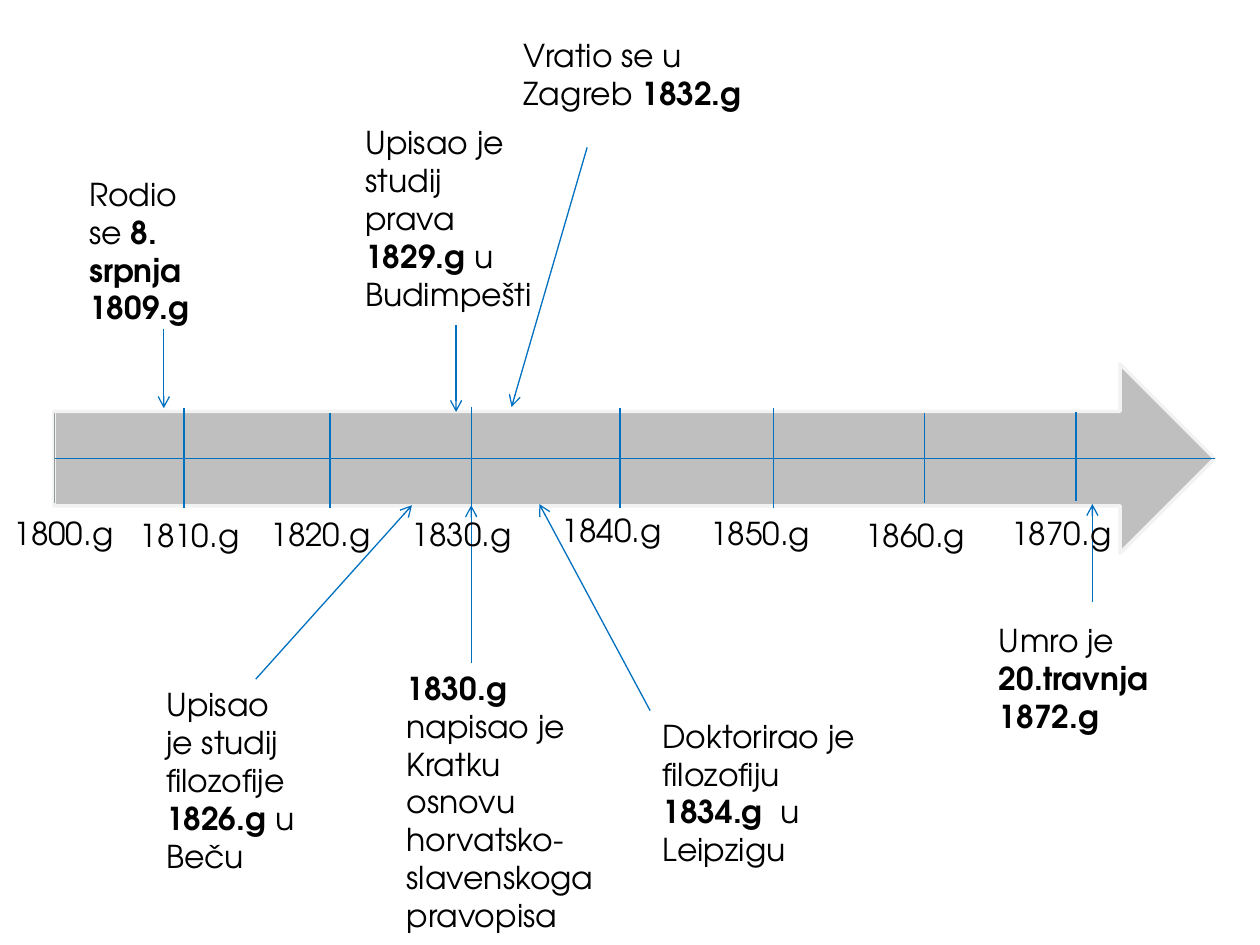
"""Build a timeline slide of a life from 1800 to 1870, laid out on a grid of 100 columns by 75 rows."""
from typing import NamedTuple, Optional

import pptx
import pptx.dml.color
import pptx.enum.shapes
import pptx.enum.text
import pptx.oxml
import pptx.oxml.ns
import pptx.util

COLORS = {"band": "BFBFBF", "edge": "F2F2F2", "line": "0070C0", "start": "8F9F96", "text": "000000"}
FONT = "TeX Gyre Adventor"
COLUMNS, ROWS = 100, 75
LABEL_HEIGHT = 4


class Box(NamedTuple):
    left: float
    top: float
    width: float
    height: float


class Line(NamedTuple):
    x1: float
    y1: float
    x2: float
    y2: float


class Decade(NamedTuple):
    year: int
    x: float
    top: float
    bottom: float
    label_left: float
    label_top: float
    label_width: float
    color: str = "line"


class Event(NamedTuple):
    box: Box
    pointer: Line
    paragraphs: list[list[tuple[str, bool]]]


DECADES = [
    Decade(1800, 4.3, 32.8, 39.9, 0.1, 40.3, 10.2, "start"),
    Decade(1810, 14.6, 32.4, 40.3, 10.1, 40.5, 10.2),
    Decade(1820, 26.2, 32.8, 40.3, 20.5, 40.4, 11.3),
    Decade(1830, 37.4, 32.3, 40.2, 31.7, 40.4, 11.4),
    Decade(1840, 49.2, 32.4, 40.3, 43.6, 40.1, 11.2),
    Decade(1850, 61.4, 32.4, 40.3, 55.4, 40.3, 11.8),
    Decade(1860, 73.4, 32.8, 39.9, 67.7, 40.5, 11.5),
    Decade(1870, 85.4, 32.7, 39.8, 79.3, 40.3, 10.2),
]

EVENTS = [
    Event(Box(6.1, 13.4, 10.6, 13.1), Line(13, 26.1, 13, 32.4),
          [[("Rodio se ", False), ("8. srpnja 1809.g", True)]]),
    Event(Box(12.2, 53.9, 12.3, 16.2), Line(20.3, 53.9, 32.7, 40.1),
          [[("Upisao je studij filozofije ", False), ("1826.g ", True), ("u Beču", False)]]),
    Event(Box(28, 9.3, 15.7, 16.2), Line(36.2, 25.8, 36.2, 32.7),
          [[("Upisao je studij prava ", False), ("1829.g", True), (" u Budimpešti", False)]]),
    Event(Box(31.3, 52.6, 17.7, 22.2), Line(37.4, 52.6, 37.4, 40.1),
          [[("1830.g ", True), ("napisao je Kratku osnovu horvatsko-slavenskoga", False)],
           [("pravopisa", False)]]),
    Event(Box(40.6, 2.4, 22, 7.1), Line(46.6, 11.7, 40.6, 32.3),
          [[("Vratio se u Zagreb ", False), ("1832.g", True)]]),
    Event(Box(51.6, 56.4, 18.1, 13.1), Line(51.6, 56.4, 42.8, 40),
          [[("Doktorirao je filozofiju ", False), ("1834.g", True), ("  u Leipzigu", False)]]),
    Event(Box(78.3, 48.8, 16.9, 10.1), Line(86.7, 47.8, 86.7, 40),
          [[("Umro je ", False), ("20.travnja 1872.g", True)]]),
]

deck = pptx.Presentation()
deck.slide_width, deck.slide_height = pptx.util.Inches(10), pptx.util.Inches(7.5)
slide = deck.slides.add_slide(deck.slide_layouts[6])


def across(columns: float) -> int:
    return round(deck.slide_width * columns / COLUMNS)


def down(rows: float) -> int:
    return round(deck.slide_height * rows / ROWS)


def place(box: Box) -> tuple[int, int, int, int]:
    return across(box.left), down(box.top), across(box.width), down(box.height)


def rgb(name: str) -> pptx.dml.color.RGBColor:
    return pptx.dml.color.RGBColor.from_string(COLORS[name])


def draw_band(box: Box) -> pptx.shapes.autoshape.Shape:
    band = slide.shapes.add_shape(pptx.enum.shapes.MSO_SHAPE.RIGHT_ARROW, *place(box))
    band.shadow.inherit = False
    band.fill.solid()
    band.fill.fore_color.rgb = rgb("band")
    band.line.color.rgb = rgb("edge")
    band.line.width = pptx.util.Pt(2)
    return band


def draw_line(line: Line, color: str = "line", head: Optional[str] = None) -> pptx.shapes.connector.Connector:
    connector = slide.shapes.add_connector(
        pptx.enum.shapes.MSO_CONNECTOR.STRAIGHT,
        across(line.x1), down(line.y1), across(line.x2), down(line.y2))
    connector.line.color.rgb = rgb(color)
    connector.line.width = pptx.util.Pt(0.75)
    namespace = pptx.oxml.ns.nsdecls("a")
    if head:
        connector.line._get_or_add_ln().append(
            pptx.oxml.parse_xml(f'<a:tailEnd {namespace} type="{head}"/>'))
    connector._element.spPr.append(pptx.oxml.parse_xml(f"<a:effectLst {namespace}/>"))
    return connector


def write(box: Box, paragraphs: list[list[tuple[str, bool]]]) -> None:
    frame = slide.shapes.add_textbox(*place(box)).text_frame
    frame.word_wrap = True
    frame.auto_size = pptx.enum.text.MSO_AUTO_SIZE.SHAPE_TO_FIT_TEXT
    for index, pieces in enumerate(paragraphs):
        paragraph = frame.add_paragraph() if index else frame.paragraphs[0]
        for words, bold in pieces:
            run = paragraph.add_run()
            run.text = words
            run.font.name = FONT
            run.font.size = pptx.util.Pt(18)
            run.font.bold = bold
            run.font.color.rgb = rgb("text")


def main() -> None:
    band = draw_band(Box(4.3, 28.9, 92.1, 15))
    for event in EVENTS:
        draw_line(event.pointer, head="arrow")
        write(event.box, event.paragraphs)
    axis = draw_line(Line(4.3, 36.3, 96.5, 36.3))
    axis.begin_connect(band, 1)
    axis.end_connect(band, 3)
    for decade in DECADES:
        draw_line(Line(decade.x, decade.top, decade.x, decade.bottom), decade.color)
        write(Box(decade.label_left, decade.label_top, decade.label_width, LABEL_HEIGHT),
              [[(f"{decade.year}.g", False)]])
    deck.save("out.pptx")


if __name__ == "__main__":
    main()
